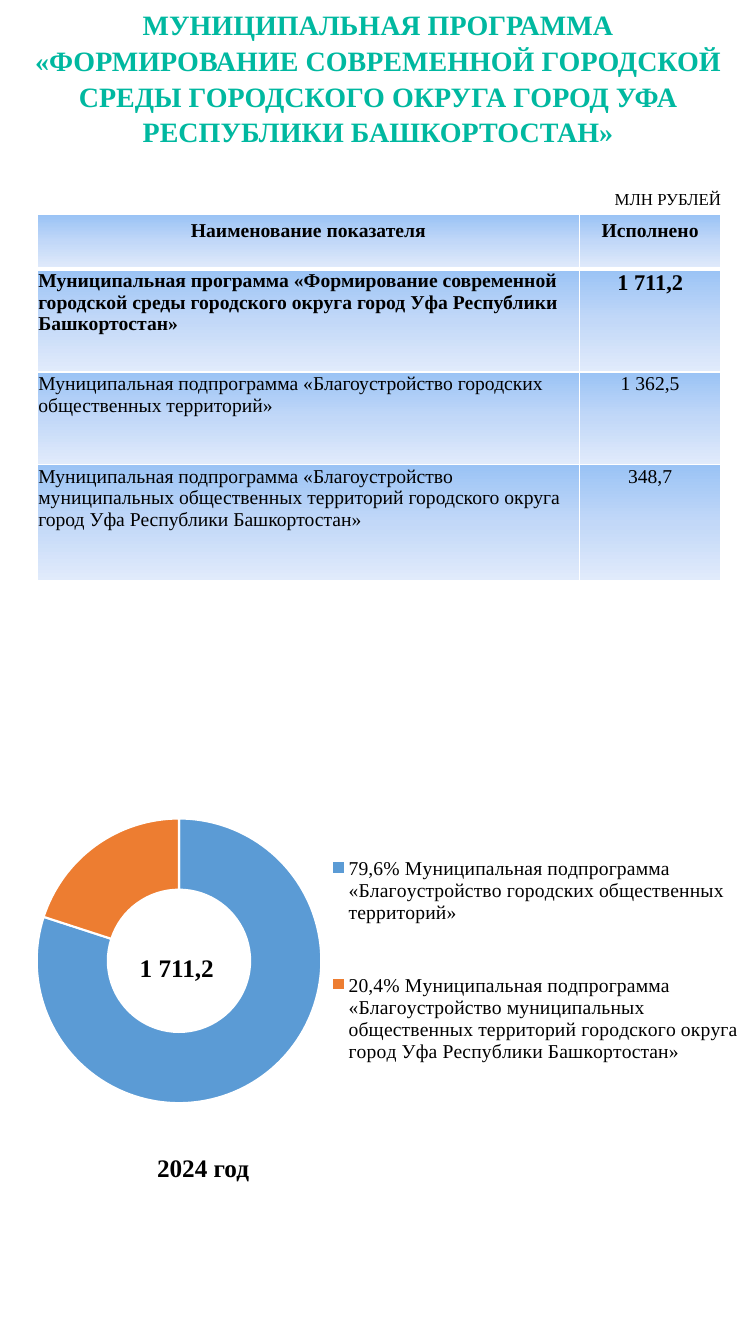
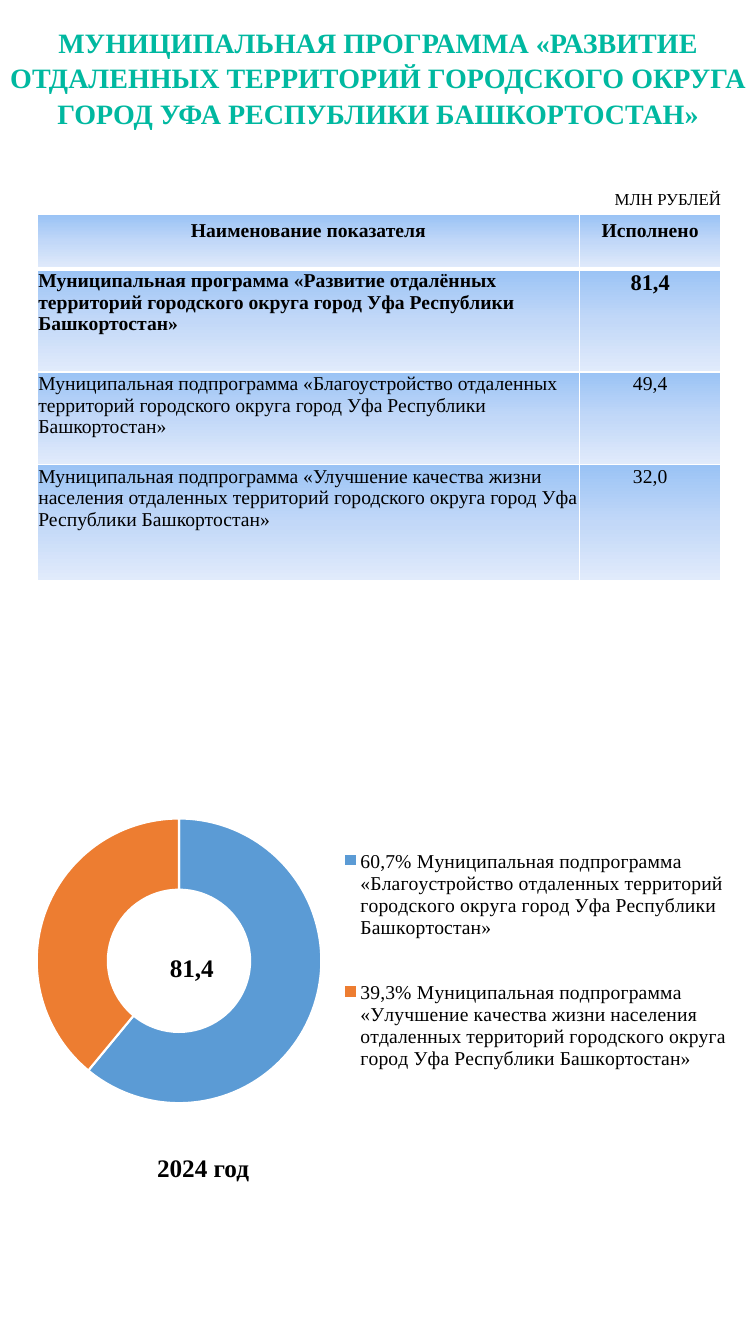
import pptx
import pptx.chart.data
import pptx.dml.color
import pptx.enum.chart
import pptx.enum.text
import pptx.oxml
import pptx.oxml.ns
import pptx.util

Inches = pptx.util.Inches
Pt = pptx.util.Pt
ALIGN = pptx.enum.text.PP_ALIGN
FIT = pptx.enum.text.MSO_AUTO_SIZE
FONT = "Times New Roman"
COLORS = {
    "title": "00B8A0", "text": "000000", "white": "FFFFFF",
    "blue": "5B9BD5", "orange": "ED7D31",
    "top": "9AC3F5", "mid": "C2D8F8", "low": "E1EBFB",
}
COLS = (5.38, 1.4)
ROWS = (0.54, 1.02, 0.92, 1.15)
HEAD = ("Наименование показателя", "Исполнено")
PLOT = (0.049, 0.193, 0.38, 0.587)
RING_RIGHT = 2.22

PAGES = [
    {
        "title": "МУНИЦИПАЛЬНАЯ ПРОГРАММА «ФОРМИРОВАНИЕ СОВРЕМЕННОЙ ГОРОДСКОЙ "
                 "СРЕДЫ ГОРОДСКОГО ОКРУГА ГОРОД УФА РЕСПУБЛИКИ БАШКОРТОСТАН»",
        "title_box": (0, -0.01, 7.5, 1.54),
        "rows": [
            ("Муниципальная программа «Формирование современной городской среды "
             "городского округа город Уфа Республики Башкортостан»", "1 711,2"),
            ("Муниципальная подпрограмма «Благоустройство городских "
             "общественных территорий»", "1 362,5"),
            ("Муниципальная подпрограмма «Благоустройство муниципальных общественных "
             "территорий городского округа город Уфа Республики Башкортостан»", "348,7"),
        ],
        "shares": {"79,6%": 80, "20,4%": 20},
        "legend": (0.43, 0.17, 0.57, 0.63),
        "total_left": 1.11,
    },
    {
        "title": "МУНИЦИПАЛЬНАЯ ПРОГРАММА «РАЗВИТИЕ ОТДАЛЕННЫХ ТЕРРИТОРИЙ "
                 "ГОРОДСКОГО ОКРУГА ГОРОД УФА РЕСПУБЛИКИ БАШКОРТОСТАН»",
        "title_box": (0, 0.17, 7.5, 1.18),
        "rows": [
            ("Муниципальная программа «Развитие отдалённых территорий "
             "городского округа город Уфа Республики Башкортостан»", "81,4"),
            ("Муниципальная подпрограмма «Благоустройство отдаленных территорий "
             "городского округа город Уфа Республики Башкортостан»", "49,4"),
            ("Муниципальная подпрограмма «Улучшение качества жизни населения отдаленных "
             "территорий городского округа город Уфа Республики Башкортостан»", "32,0"),
        ],
        "shares": {"60,7%": 61, "39,3%": 39},
        "legend": (0.44, 0.17, 0.55, 0.63),
        "total_left": 0.92,
    },
]


def color(name):
    return pptx.dml.color.RGBColor.from_string(COLORS[name])


def style(font, size, bold=False, tint="text", name=FONT):
    font.name, font.size, font.bold = name, Pt(size), bold
    font.color.rgb = color(tint)


def write(frame, text, size, bold=False, align=None, tint="text"):
    para = frame.paragraphs[0]
    para.alignment = align
    run = para.add_run()
    run.text = text
    style(run.font, size, bold, tint)
    return para


def add_title(slide, text, box):
    title = slide.shapes.title
    title.left, title.top, title.width, title.height = map(Inches, box)
    frame = title.text_frame
    frame.vertical_anchor = pptx.enum.text.MSO_ANCHOR.MIDDLE
    frame.auto_size = FIT.SHAPE_TO_FIT_TEXT
    para = write(frame, text, 20, True, ALIGN.CENTER, "title")
    para.line_spacing = 1.07
    para.space_after = Pt(8)


def add_label(slide, text, box, size, bold=False, align=None, wrap=True):
    frame = slide.shapes.add_textbox(*map(Inches, box)).text_frame
    frame.word_wrap = wrap
    frame.auto_size = FIT.SHAPE_TO_FIT_TEXT if wrap else FIT.NONE
    write(frame, text, size, bold, align)


def shade(cell, top, bottom):
    """Give a cell white borders (top and bottom in points) and a gradient."""
    props = cell._tc.get_or_add_tcPr()
    names = pptx.oxml.ns.nsdecls("a")
    for side, width in (("L", 1), ("R", 1), ("T", top), ("B", bottom)):
        props.append(pptx.oxml.parse_xml(
            f'<a:ln{side} {names} w="{Pt(width)}"><a:solidFill>'
            f'<a:srgbClr val="{COLORS["white"]}"/></a:solidFill></a:ln{side}>'))
    stops = "".join(
        f'<a:gs pos="{pos}"><a:srgbClr val="{COLORS[name]}"/></a:gs>'
        for pos, name in ((0, "top"), (50000, "mid"), (100000, "low")))
    props.append(pptx.oxml.parse_xml(
        f'<a:gradFill {names} rotWithShape="1"><a:gsLst>{stops}</a:gsLst>'
        '<a:lin ang="5400000" scaled="0"/></a:gradFill>'))


def add_table(slide, rows):
    box = map(Inches, (0.37, 2.13, sum(COLS), sum(ROWS)))
    table = slide.shapes.add_table(len(ROWS), len(COLS), *box).table
    table.horz_banding = False
    for col, width in zip(table.columns, COLS):
        col.width = Inches(width)
    for row, height in zip(table.rows, ROWS):
        row.height = Inches(height)
    for i, texts in enumerate([HEAD, *rows]):
        for j, text in enumerate(texts):
            cell = table.cell(i, j)
            if i:
                cell.margin_left = cell.margin_right = cell.margin_top = Inches(0.01)
                cell.margin_bottom = 0
            shade(cell, 3 if i == 1 else 1, 3 if i == 0 else 1)
            align = ALIGN.LEFT if i and not j else ALIGN.CENTER
            size = 16 if (i, j) == (1, 1) else 14
            write(cell.text_frame, text, size, i < 2, align)


def make_layout(box, inner=False):
    """Build a manual chart layout from fractions of the chart area."""
    target = '<c:layoutTarget val="inner"/>' if inner else ""
    modes = '<c:xMode val="edge"/><c:yMode val="edge"/>'
    sizes = "".join(f'<c:{key} val="{val}"/>' for key, val in zip("xywh", box))
    return pptx.oxml.parse_xml(
        f'<c:layout {pptx.oxml.ns.nsdecls("c")}><c:manualLayout>'
        f'{target}{modes}{sizes}</c:manualLayout></c:layout>')


def add_ring(slide, names, shares, legend_box):
    qn = pptx.oxml.ns.qn
    data = pptx.chart.data.CategoryChartData()
    data.categories = [f"{share} {name}" for share, name in zip(shares, names)]
    data.add_series("Series 1", shares.values())
    box = map(Inches, (0, 7.19, 7.43, 4.81))
    chart = slide.shapes.add_chart(
        pptx.enum.chart.XL_CHART_TYPE.DOUGHNUT, *box, data).chart
    style(chart.font, 10, name="Calibri")
    chart.has_title = False
    plot = chart.plots[0]
    plot.vary_by_categories = True
    for i, name in enumerate(("blue", "orange")):
        form = plot.series[0].points[i].format
        form.fill.solid()
        form.fill.fore_color.rgb = color(name)
        form.line.color.rgb = color("white")
        form.line.width = Pt(1.5)

    chart.has_legend = True
    legend = chart.legend
    legend.position = pptx.enum.chart.XL_LEGEND_POSITION.RIGHT
    legend.include_in_layout = False
    style(legend.font, 14)

    area = chart._chartSpace.find(".//" + qn("c:plotArea"))
    for part in (area, legend._element):
        for old in part.findall(qn("c:layout")):
            part.remove(old)
    area.insert(0, make_layout(PLOT, True))
    legend._element.find(qn("c:legendPos")).addnext(make_layout(legend_box))
    area.find(".//" + qn("c:holeSize")).set("val", "75")


def add_page(deck, page):
    slide = deck.slides.add_slide(deck.slide_layouts[5])
    rows, left = page["rows"], page["total_left"]
    add_title(slide, page["title"], page["title_box"])
    add_ring(slide, [row[0] for row in rows[1:]], page["shares"], page["legend"])
    add_table(slide, rows)
    add_label(slide, rows[0][1], (left, 9.4, RING_RIGHT - left, 0.4),
              18, True, ALIGN.RIGHT)
    add_label(slide, "2024 год", (1.46, 11.38, 1, 0.45), 18, True, wrap=False)
    add_label(slide, "МЛН РУБЛЕЙ", (6, 1.82, 1.5, 0.3), 12)


def main():
    deck = pptx.Presentation()
    deck.slide_width, deck.slide_height = Inches(7.5), Inches(13.33)
    for page in PAGES:
        add_page(deck, page)
    deck.save("out.pptx")


if __name__ == "__main__":
    main()
